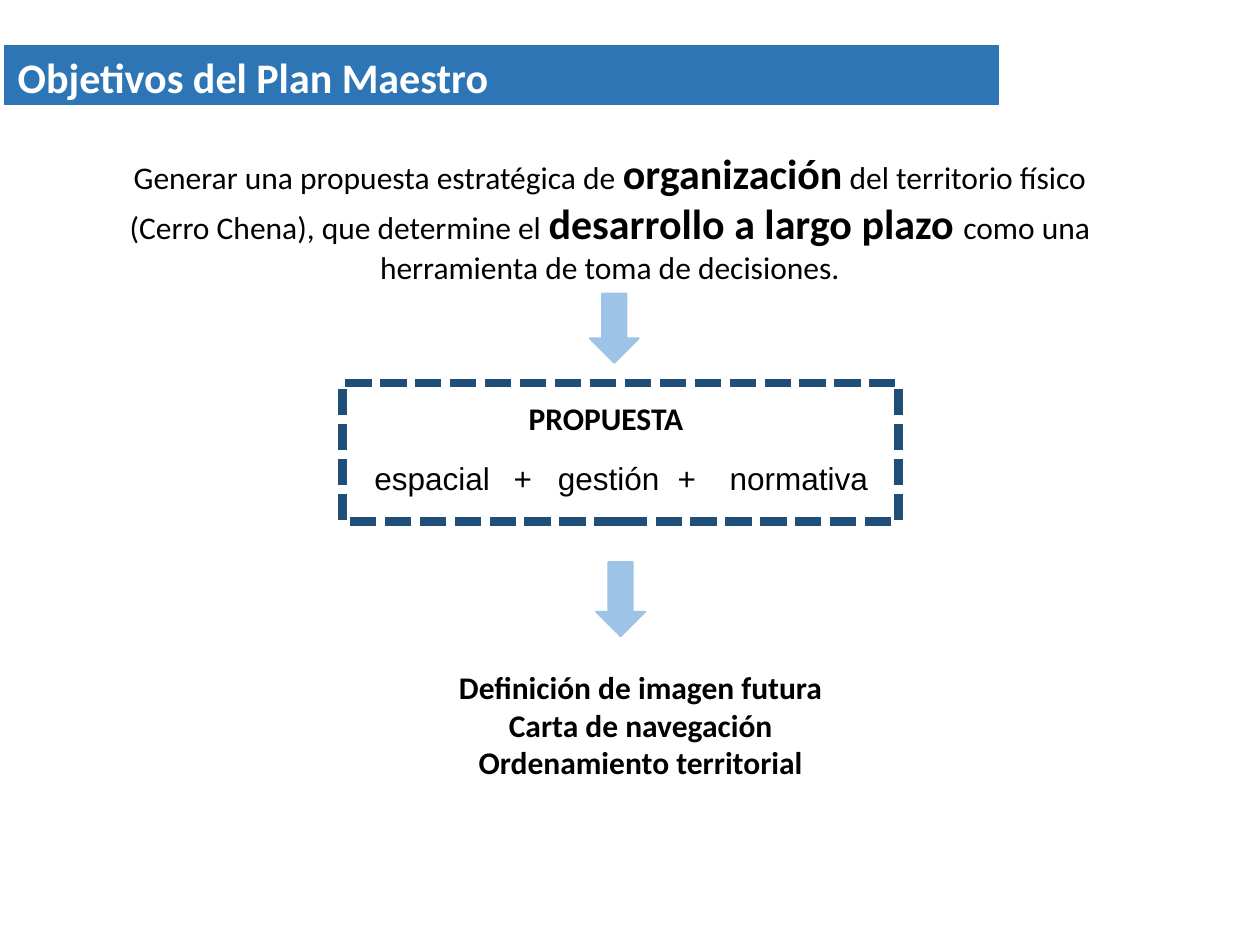
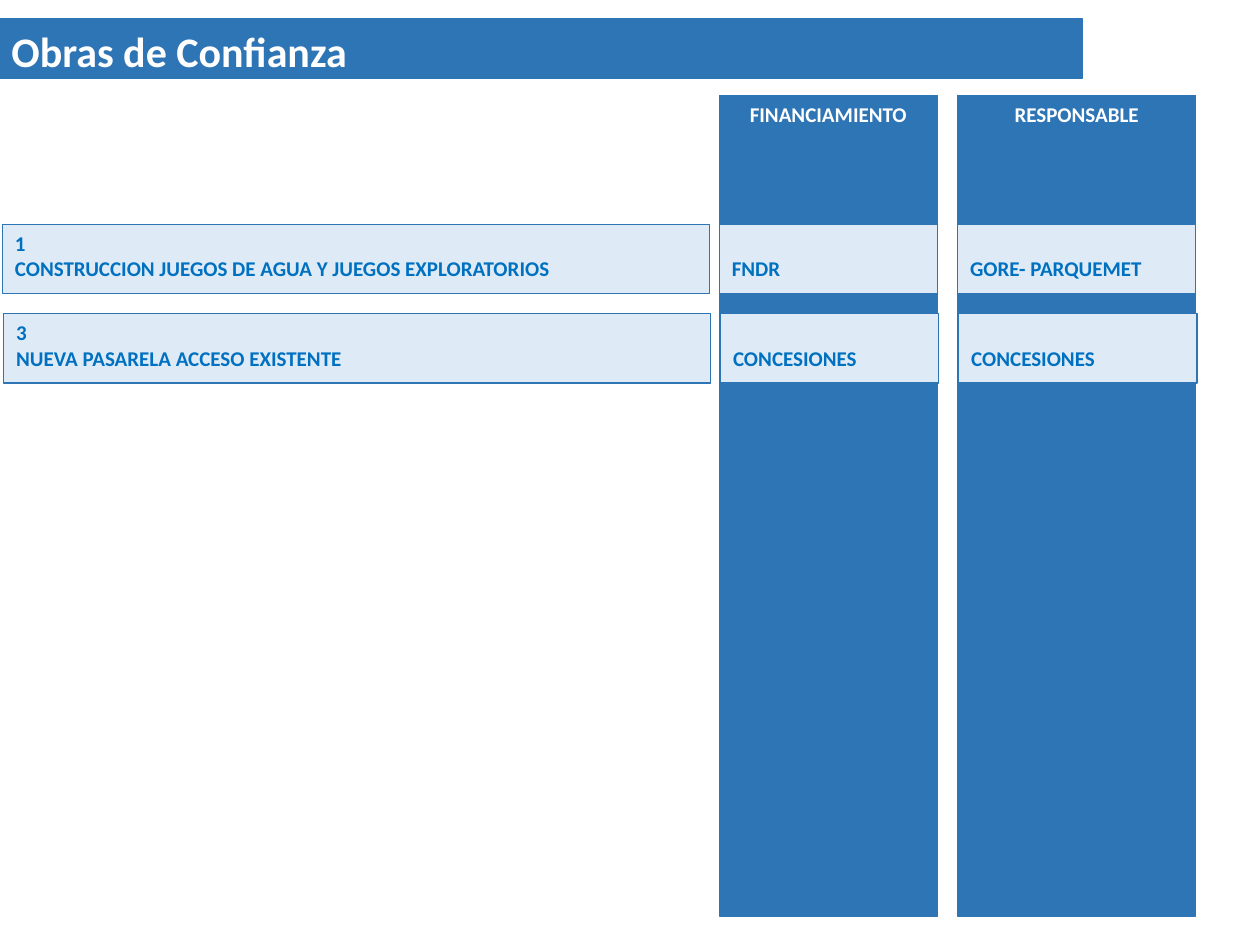
"""Build two slides on the goals and first works of a park master plan."""
from dataclasses import dataclass

from lxml import etree
from pptx import Presentation
from pptx.dml.color import RGBColor
from pptx.enum.dml import MSO_LINE
from pptx.enum.shapes import MSO_SHAPE
from pptx.enum.text import MSO_ANCHOR, MSO_AUTO_SIZE, PP_ALIGN
from pptx.oxml.ns import qn
from pptx.util import Inches, Pt

LEFT, CENTER = PP_ALIGN.LEFT, PP_ALIGN.CENTER
TOP = MSO_ANCHOR.TOP
NO_AUTOFIT = MSO_AUTO_SIZE.NONE
RECTANGLE, DOWN_ARROW = MSO_SHAPE.RECTANGLE, MSO_SHAPE.DOWN_ARROW
SHORT_DASH = MSO_LINE.SQUARE_DOT
LAYOUT_TITLE_BODY, LAYOUT_TITLE_ONLY = 1, 5


@dataclass(frozen=True)
class Theme:
    """Colours, fonts and sizes shared by the slides."""
    band: str = "2E75B6"
    cell: str = "DEEBF7"
    cell_text: str = "0070C0"
    arrow: str = "9DC3E6"
    frame: str = "1F4E79"
    white: str = "FFFFFF"
    black: str = "000000"
    font: str = "Calibri"
    plain_font: str = "Arial"
    title_size: int = 24
    text_size: int = 18
    label_size: int = 12
    hairline: float = 0.75


THEME = Theme()


def write_text(shape, paragraphs, size=THEME.text_size, color=THEME.black, font=THEME.font,
               bold=False, align=LEFT, top_inset=0.05, bullets_off=False):
    """Write paragraphs, each a string or a list of (text, size, bold) runs."""
    frame = shape.text_frame
    frame.word_wrap = True
    frame.auto_size = NO_AUTOFIT
    frame.vertical_anchor = TOP
    frame.margin_left = frame.margin_right = Inches(0.1)
    frame.margin_top, frame.margin_bottom = Inches(top_inset), Inches(0.05)
    for index, content in enumerate(paragraphs):
        paragraph = frame.add_paragraph() if index else frame.paragraphs[0]
        paragraph.alignment = align
        paragraph.space_before = Pt(0)
        if bullets_off:
            properties = paragraph._p.get_or_add_pPr()
            properties.set("marL", "0")
            properties.set("indent", "0")
            etree.SubElement(properties, qn("a:buNone"))
        runs = [(content, size, bold)] if isinstance(content, str) else content
        for text, run_size, run_bold in runs:
            run = paragraph.add_run()
            run.text = text
            run.font.name = font
            run.font.size = Pt(run_size)
            run.font.bold = run_bold
            run.font.color.rgb = RGBColor.from_string(color)


class SlideBuilder:
    """Hold the theme and the current slide, and add elements to it."""

    def __init__(self, presentation, theme):
        """Keep the presentation and its theme."""
        self.presentation = presentation
        self.theme = theme
        self.slide = None

    def new_slide(self, layout):
        """Start a slide from a template layout."""
        self.slide = self.presentation.slides.add_slide(self.presentation.slide_layouts[layout])

    def place(self, shape, box):
        """Move a shape to left, top, width, height in inches."""
        shape.left, shape.top, shape.width, shape.height = map(Inches, box)

    def paint(self, shape, fill, line, width):
        """Set the fill and outline of a shape."""
        if fill:
            shape.fill.solid()
            shape.fill.fore_color.rgb = RGBColor.from_string(fill)
        else:
            shape.fill.background()
        shape.line.color.rgb = RGBColor.from_string(line)
        shape.line.width = Pt(width)

    def title(self, text, box):
        """Show the title in a coloured band."""
        shape = self.slide.shapes.title
        self.place(shape, box)
        self.paint(shape, self.theme.band, self.theme.band, self.theme.hairline)
        write_text(shape, [text], size=self.theme.title_size, color=self.theme.white, bold=True)

    def body(self, paragraphs, box, **text_format):
        """Fill the body placeholder with an unbulleted list."""
        shape = self.slide.placeholders[1]
        self.place(shape, box)
        write_text(shape, paragraphs, bullets_off=True, **text_format)

    def text(self, paragraphs, box, **text_format):
        """Add a text box."""
        shape = self.slide.shapes.add_textbox(*map(Inches, box))
        write_text(shape, paragraphs, **text_format)

    def shape(self, kind, box, fill, line, width=THEME.hairline):
        """Add a painted preset shape without shadow."""
        shape = self.slide.shapes.add_shape(kind, *map(Inches, box))
        shape.shadow.inherit = False
        self.paint(shape, fill, line, width)
        return shape

    def arrow(self, box):
        """Add a light downward arrow."""
        self.shape(DOWN_ARROW, box, self.theme.arrow, self.theme.arrow, 1)

    def dashed_frame(self, box):
        """Add an unfilled frame with a thick dashed outline."""
        self.shape(RECTANGLE, box, None, self.theme.frame, 5).line.dash_style = SHORT_DASH

    def panel(self, paragraphs, box, fill, color, **text_format):
        """Add a rectangle with a bold label."""
        shape = self.shape(RECTANGLE, box, fill, self.theme.band)
        write_text(shape, paragraphs, size=self.theme.label_size, color=color, bold=True,
                   **text_format)


def build_goals(builder):
    """Lead from the plan's purpose to its proposal and outcomes."""
    theme = builder.theme
    builder.new_slide(LAYOUT_TITLE_BODY)
    builder.title("Objetivos del Plan Maestro", (0.04, 0.36, 7.88, 0.47))
    normal, strong = (theme.text_size, False), (theme.title_size, True)
    purpose = [
        ("Generar una propuesta estratégica de ", *normal),
        ("organización", *strong),
        (" del territorio físico (Cerro Chena), que determine el ", *normal),
        ("desarrollo a largo plazo ", *strong),
        ("como una herramienta de toma de decisiones.", *normal),
    ]
    builder.text([purpose], (0.9, 1.12, 7.88, 1.2), align=CENTER)
    builder.arrow((4.68, 2.33, 0.39, 0.55))
    builder.arrow((4.73, 4.46, 0.39, 0.59))
    builder.body(["Definición de imagen futura", "Carta de navegación", "Ordenamiento territorial"],
                 (2.8, 5.25, 4.57, 1.06), bold=True, align=CENTER)
    builder.dashed_frame((2.72, 3.04, 4.41, 1.1))
    builder.text(["PROPUESTA"], (3.81, 3.12, 2, 0.4), bold=True, align=CENTER)
    width = 1.42
    proposal_parts = [("espacial", 3.43), ("+", 4.15), ("gestión", 4.83), ("+", 5.45),
                      ("normativa", 6.34)]
    for part, center in proposal_parts:
        builder.text([part], (center - width / 2, 3.59, width, 0.4),
                     font=theme.plain_font, align=CENTER)


def build_works(builder):
    """List the works with their funding and responsible body."""
    theme = builder.theme
    builder.new_slide(LAYOUT_TITLE_ONLY)
    builder.title("Obras de Confianza", (-0.01, 0.15, 8.6, 0.47))
    columns = [(0.02, 5.61), (5.71, 1.73), (7.6, 1.89)]
    for heading, (left, width) in zip(["FINANCIAMIENTO", "RESPONSABLE"], columns[1:]):
        builder.panel([heading], (left, 0.76, width, 6.51), theme.band, theme.white, align=CENTER)
    works = [
        (["1", "CONSTRUCCION JUEGOS DE AGUA Y JUEGOS EXPLORATORIOS"], ["FNDR"],
         ["GORE- PARQUEMET"]),
        (["3", "NUEVA PASARELA ACCESO EXISTENTE"], ["CONCESIONES"], ["CONCESIONES"]),
    ]
    for row, work in enumerate(works):
        for lines, (left, width) in zip(work, columns):
            builder.panel(lines, (left + 0.01 * row, 1.78 + 0.71 * row, width, 0.55),
                          theme.cell, theme.cell_text,
                          top_inset=0.05 if len(lines) == 2 else 0.25)


def main():
    """Build and save the presentation."""
    presentation = Presentation()
    presentation.slide_width, presentation.slide_height = Inches(10), Inches(7.5)
    builder = SlideBuilder(presentation, THEME)
    build_goals(builder)
    build_works(builder)
    presentation.save("out.pptx")


if __name__ == "__main__":
    main()
